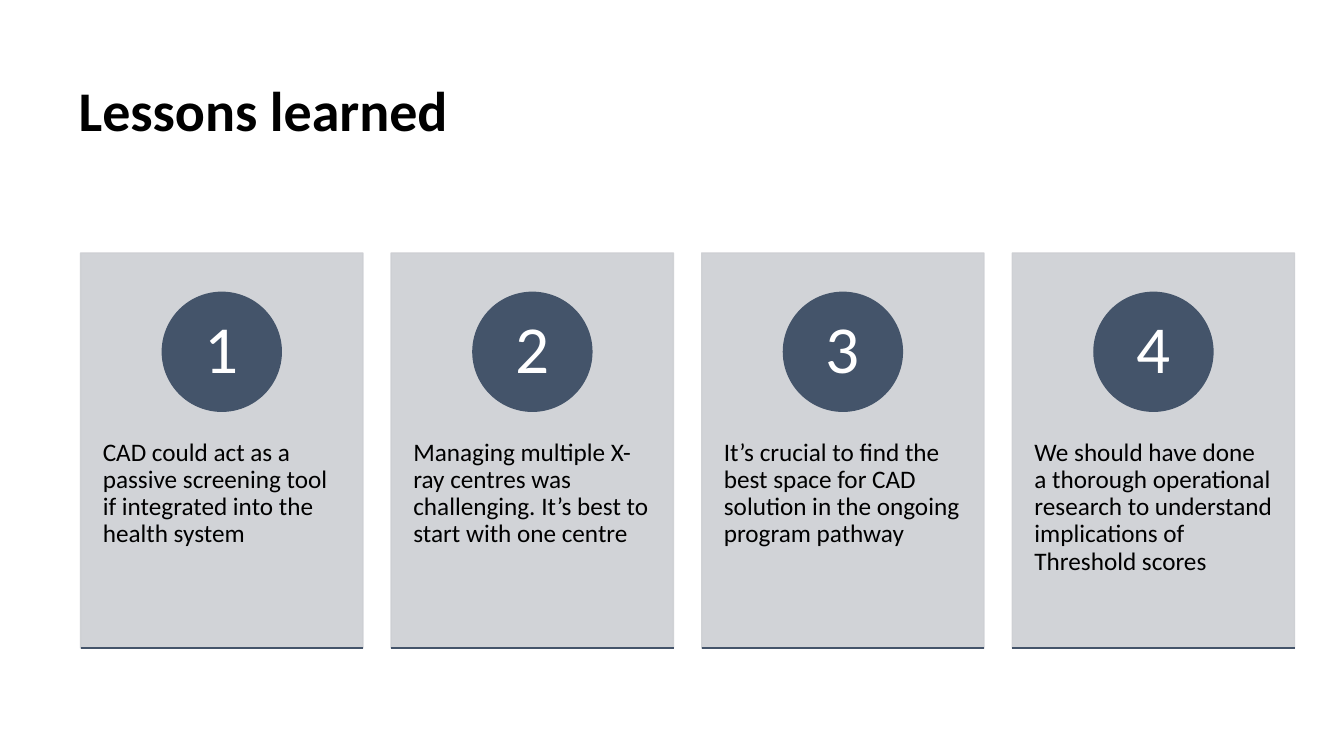
from lxml import etree
from pptx import Presentation
from pptx.dml.color import RGBColor
from pptx.enum.shapes import MSO_CONNECTOR, MSO_SHAPE
from pptx.enum.text import MSO_ANCHOR, MSO_AUTO_SIZE, PP_ALIGN
from pptx.oxml.ns import qn
from pptx.util import Pt

PX = 9144
NAVY, GREY, BLACK, WHITE = "44546A", "CDCFD3", "000000", "FFFFFF"
LESSONS = [
    "CAD could act as a passive screening tool if integrated into the health system",
    "Managing multiple X-ray centres was challenging. It’s best to start with one centre",
    "It’s crucial to find the best space for CAD solution in the ongoing program pathway",
    "We should have done a thorough operational research to understand "
    "implications of Threshold scores",
]


def px(*lengths):
    """Turn whole px lengths into EMU."""
    return [n * PX for n in lengths]


def rgb(color):
    """Return the colour for a hex string."""
    return RGBColor.from_string(color)


def write(sp, text, size, color, insets, align=PP_ALIGN.LEFT,
          anchor=MSO_ANCHOR.TOP, bold=False):
    """Write one formatted paragraph into a shape."""
    tf = sp.text_frame
    tf.word_wrap = True
    tf.auto_size = MSO_AUTO_SIZE.NONE
    tf.vertical_anchor = anchor
    across, down = px(*insets)
    tf.margin_left = tf.margin_right = across
    tf.margin_top = tf.margin_bottom = down
    p = tf.paragraphs[0]
    p.alignment = align
    p.line_spacing = 0.9
    p.space_before = Pt(0)
    r = p.add_run()
    r.text = text
    r.font.name = "Calibri"
    r.font.size = Pt(size)
    r.font.bold = bold
    r.font.color.rgb = rgb(color)


def add_block(s, kind, box, color, opacity=100):
    """Add a preset shape whose fill and outline share one colour."""
    sp = s.shapes.add_shape(kind, *px(*box))
    sp.shadow.inherit = False
    sp.fill.solid()
    sp.fill.fore_color.rgb = rgb(color)
    sp.line.color.rgb = rgb(color)
    sp.line.width = Pt(1)
    if opacity < 100:
        for clr in sp._element.spPr.iter(qn("a:srgbClr")):
            etree.SubElement(clr, qn("a:alpha")).set("val", str(opacity * 1000))
    return sp


def add_rule(s, x, y, width):
    """Add a horizontal rule."""
    line = s.shapes.add_connector(MSO_CONNECTOR.STRAIGHT, *px(x, y, x + width, y))
    line.line.color.rgb = rgb(NAVY)
    line.line.width = Pt(1)
    etree.SubElement(line._element.spPr, qn("a:effectLst"))


def add_title(s, box, text):
    """Place and fill the title placeholder."""
    sp = s.shapes.title
    sp.left, sp.top, sp.width, sp.height = px(*box)
    write(sp, text, 40, BLACK, (10, 5), anchor=MSO_ANCHOR.MIDDLE, bold=True)


def add_card(s, box, number, text):
    """Add a numbered lesson card with a rule along its foot."""
    x, y, w, h = box
    d = 118
    add_block(s, MSO_SHAPE.RECTANGLE, box, GREY, 90)
    body = s.shapes.add_textbox(*px(x, y + 149, w, h - 157))
    write(body, text, 18, BLACK, (22, 36))
    badge = add_block(s, MSO_SHAPE.OVAL, (x + (w - d) // 2, y + 39, d, d), NAVY)
    write(badge, str(number), 48, WHITE, (9, 1), PP_ALIGN.CENTER, MSO_ANCHOR.MIDDLE)
    add_rule(s, x, y + h, w)


def add_cards(s, box, gap, lessons):
    """Share the box equally among the lesson cards."""
    x, y, w, h = box
    card_w = (w + gap) // len(lessons) - gap
    for i, text in enumerate(lessons):
        add_card(s, (x + i * (card_w + gap), y, card_w, h), i + 1, text)


def main():
    """Build and save the slide."""
    prs = Presentation()
    prs.slide_width, prs.slide_height = px(1333, 750)
    s = prs.slides.add_slide(prs.slide_layouts[5])
    add_title(s, (68, -192, 532, 609), "Lessons learned")
    add_cards(s, (80, 251, 1204, 392), 28, LESSONS)
    prs.save("out.pptx")


if __name__ == "__main__":
    main()
